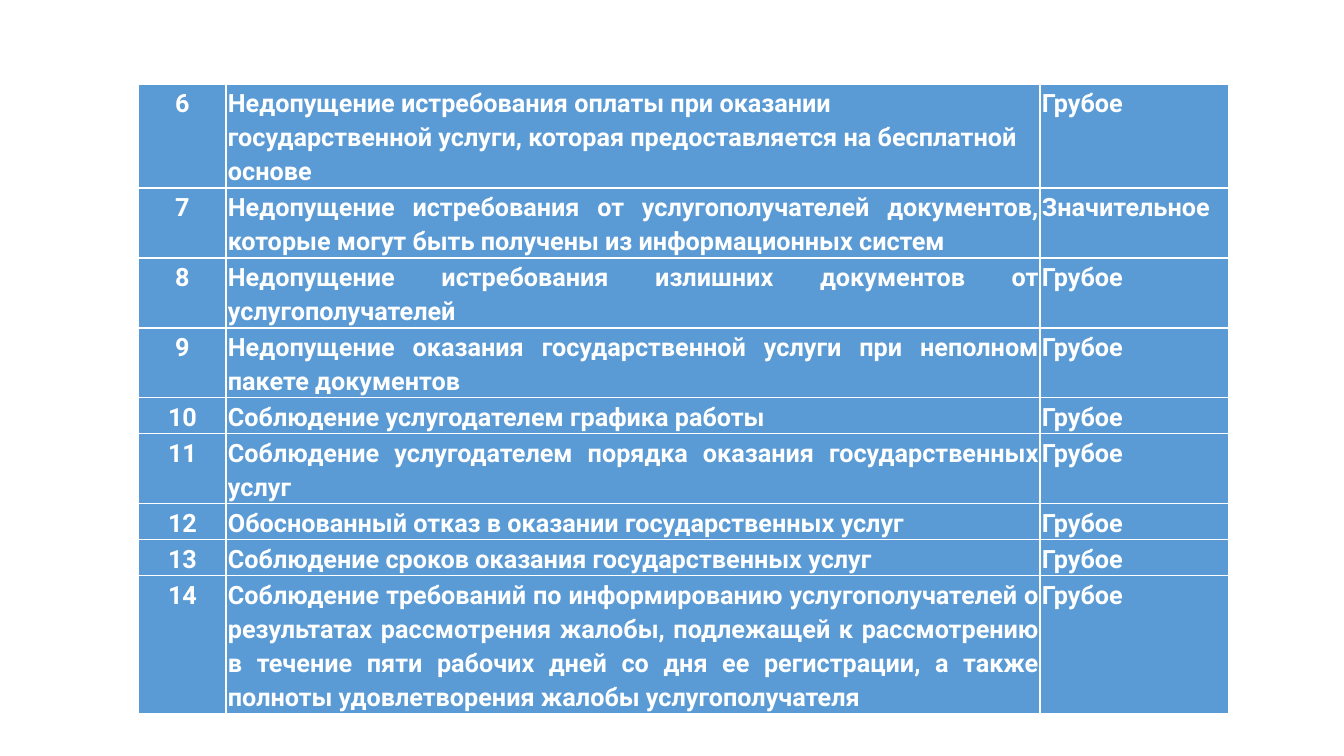
from lxml import etree
from pptx import Presentation
from pptx import util as u
from pptx.dml.color import RGBColor
from pptx.enum import text
from pptx.oxml.ns import qn

GROSS = "Грубое"
REQUIREMENTS = [
    ("6", "Недопущение истребования оплаты при оказании государственной услуги, "
          "которая предоставляется на бесплатной основе", GROSS, 3),
    ("7", "Недопущение истребования от услугополучателей документов, "
          "которые могут быть получены из информационных систем", "Значительное", 2),
    ("8", "Недопущение истребования излишних документов от услугополучателей", GROSS, 2),
    ("9", "Недопущение оказания государственной услуги при неполном пакете документов", GROSS, 2),
    ("10", "Соблюдение услугодателем графика работы", GROSS, 1),
    ("11", "Соблюдение услугодателем порядка оказания государственных услуг", GROSS, 2),
    ("12", "Обоснованный отказ в оказании государственных услуг", GROSS, 1),
    ("13", "Соблюдение сроков оказания государственных услуг", GROSS, 1),
    ("14", "Соблюдение требований по информированию услугополучателей о результатах "
           "рассмотрения жалобы, подлежащей к рассмотрению в течение пяти рабочих дней "
           "со дня ее регистрации, а также полноты удовлетворения жалобы услугополучателя",
     GROSS, 4),
]

BLUE = RGBColor(0x5B, 0x9B, 0xD5)
WHITE = RGBColor(0xFF, 0xFF, 0xFF)
FONT = "Roboto"

SLIDE_W, SLIDE_H = 1344, 756
LEFT, TOP = 138, 84
COL_WIDTHS = (88, 814, 189)
LINE_H, ROW_PAD, INSET = 34, 2, 1
SCALE = 12192000 / SLIDE_W


def px(n):
    return u.Emu(round(n * SCALE))


def write(tf, content, align, size=18, color=WHITE, bold=True):
    p = tf.paragraphs[0]
    p.alignment = align
    p.line_spacing = 1.15
    p.space_after = u.Pt(1)
    pPr = p._p.get_or_add_pPr()
    pPr.set("marL", str(px(INSET)))
    pPr.set("indent", "0")
    r = p.add_run()
    r.text = content
    r.font.name = FONT
    r.font.size = u.Pt(size)
    r.font.bold = bold
    r.font.color.rgb = color


def add_borders(cell, color=WHITE, width=1):
    tcPr = cell._tc.get_or_add_tcPr()
    for i, side in enumerate(("a:lnL", "a:lnR", "a:lnT", "a:lnB")):
        ln = etree.Element(qn(side), w=str(u.Pt(width)))
        fill = etree.SubElement(ln, qn("a:solidFill"))
        etree.SubElement(fill, qn("a:srgbClr"), val=str(color))
        tcPr.insert(i, ln)


def main():
    prs = Presentation()
    prs.slide_width, prs.slide_height = px(SLIDE_W), px(SLIDE_H)
    s = prs.slides.add_slide(prs.slide_layouts[6])

    heights = [lines * LINE_H + ROW_PAD for *_, lines in REQUIREMENTS]
    frame = s.shapes.add_table(len(heights), len(COL_WIDTHS), px(LEFT), px(TOP),
                               px(sum(COL_WIDTHS)), px(sum(heights)))
    table = frame.table
    table.horz_banding = False
    for col, width in zip(table.columns, COL_WIDTHS):
        col.width = px(width)

    for i, (*values, _) in enumerate(REQUIREMENTS):
        table.rows[i].height = px(heights[i])
        body = text.PP_ALIGN.JUSTIFY if i else text.PP_ALIGN.LEFT
        for j, value in enumerate(values):
            cell = table.cell(i, j)
            cell.margin_left = cell.margin_right = px(INSET)
            cell.margin_top = cell.margin_bottom = px(INSET)
            cell.fill.solid()
            cell.fill.fore_color.rgb = BLUE
            add_borders(cell)
            write(cell.text_frame, value, body if j else text.PP_ALIGN.CENTER)

    prs.save("out.pptx")


if __name__ == "__main__":
    main()
